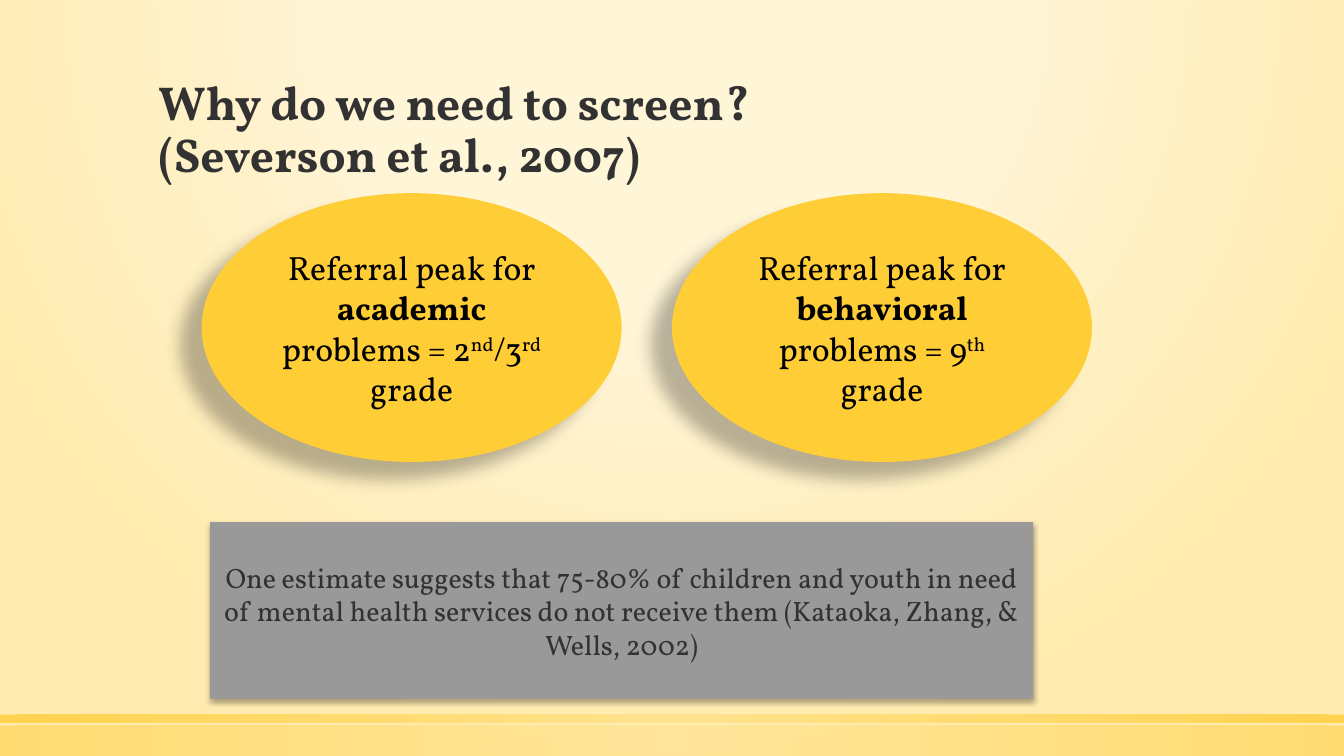
"""Build the slide on why schools need to screen students."""
from lxml.etree import SubElement
from pptx import Presentation
from pptx.dml.color import RGBColor
from pptx.enum.shapes import MSO_SHAPE as Preset
from pptx.enum.text import MSO_ANCHOR as Anchor, MSO_AUTO_SIZE as AutoSize, PP_ALIGN as Align
from pptx.oxml import parse_xml
from pptx.oxml.ns import nsdecls, qn
from pptx.util import Pt

FONT = "Vollkorn"
BLACK = RGBColor(0x00, 0x00, 0x00)
CHARCOAL = RGBColor(0x32, 0x32, 0x32)
GRAY = RGBColor(0x99, 0x99, 0x99)
GOLD = RGBColor(0xFF, 0xCD, 0x36)
LIGHT_GOLD = RGBColor(0xFF, 0xE1, 0x86)
CREAM = RGBColor(0xFF, 0xF5, 0xD7)
SAND = RGBColor(0xFF, 0xEB, 0xAF)

TITLE = "Why do we need to screen?\v(Severson et al., 2007)"
REFERRAL_PEAKS = [
    [("Referral peak for ", ""), ("academic", "bold"), (" problems = 2", ""),
     ("nd", "super"), ("/3", ""), ("rd", "super"), (" grade", "")],
    [("Referral peak for ", ""), ("behavioral", "bold"), (" problems = 9", ""),
     ("th", "super"), (" grade", "")],
]
ESTIMATE = [("One estimate suggests that 75-80% of children and youth in need of mental "
             "health services do not receive them (Kataoka, Zhang, & Wells, 2002)", "")]

SLIDE_W, SLIDE_H = 960, 540
BACKDROP = [(0, CREAM, 59), (40, CREAM, 66), (100, SAND, 100)]
FOOTER_BANDS = [(518.4, 21.6, 50), (510.5, 5.8, 80)]
PEAK_LEFT, PEAK_TOP, PEAK_W, PEAK_H, PEAK_STEP = 144, 138, 300, 192, 336
PEAK_SHADOW = (28, 11.8, 19.7, 141)
ESTIMATE_BOX = (150, 373, 588, 126)
ESTIMATE_SHADOW = (32, 3.5, 2.2, 90)


def shade_radially(owner, stops, focus):
    """Give a slide background or shape a circular gradient."""
    stop_xml = "".join(
        f'<a:gs pos="{position * 1000}"><a:srgbClr val="{color}">'
        f'<a:alpha val="{opacity * 1000}"/></a:srgbClr></a:gs>'
        for position, color, opacity in stops)
    left, top, right, bottom = (edge * 1000 for edge in focus)
    gradient = parse_xml(
        f'<a:gradFill {nsdecls("a")} rotWithShape="1"><a:gsLst>{stop_xml}</a:gsLst>'
        f'<a:path path="circle"><a:fillToRect l="{left}" t="{top}" r="{right}" b="{bottom}"/>'
        '</a:path></a:gradFill>')
    plain = owner.element.find(".//" + qn("a:gradFill"))
    plain.getparent().replace(plain, gradient)


def add_plain_shape(slide, preset, box):
    """Add a shape without outline or shadow."""
    shape = slide.shapes.add_shape(preset, *map(Pt, box))
    shape.shadow.inherit = False
    shape.line.fill.background()
    return shape


def cast_shadow(shape, opacity, blur, distance, angle):
    """Add a soft black outer shadow."""
    effects = shape.element.spPr.find(qn("a:effectLst"))
    shadow = SubElement(effects, qn("a:outerShdw"), blurRad=str(int(Pt(blur))),
                        dist=str(int(Pt(distance))), dir=str(angle * 60000),
                        algn="ctr", rotWithShape="0")
    color = SubElement(shadow, qn("a:srgbClr"), val=str(BLACK))
    SubElement(color, qn("a:alpha"), val=str(opacity * 1000))


def style(font, size, color, bold=False):
    """Set the typeface, size, colour and weight."""
    font.name, font.size, font.bold = FONT, Pt(size), bold
    font.color.rgb = color


def add_message(slide, preset, box, fill, shadow, pieces, size, color):
    """Add a filled shape with centred text."""
    message = add_plain_shape(slide, preset, box)
    message.fill.solid()
    message.fill.fore_color.rgb = fill
    cast_shadow(message, *shadow)
    frame = message.text_frame
    frame.word_wrap = True
    frame.vertical_anchor = Anchor.MIDDLE
    paragraph = frame.paragraphs[0]
    paragraph.alignment = Align.CENTER
    for words, emphasis in pieces:
        run = paragraph.add_run()
        run.text = words
        style(run.font, size, color, emphasis == "bold")
        if emphasis == "super":
            run.font._element.set("baseline", "30000")


def add_title(slide):
    """Place and format the title."""
    title = slide.shapes.title
    title.left, title.top, title.width, title.height = map(Pt, (106, 37, 749, 97))
    frame = title.text_frame
    frame.text = TITLE
    frame.word_wrap = True
    frame.auto_size = AutoSize.NONE
    frame.vertical_anchor = Anchor.BOTTOM
    heading = frame.paragraphs[0]
    heading.alignment = Align.LEFT
    heading.line_spacing = 0.9
    for run in heading.runs:
        style(run.font, 34, CHARCOAL, True)


def main():
    """Assemble and save the slide."""
    deck = Presentation()
    deck.slide_width, deck.slide_height = Pt(SLIDE_W), Pt(SLIDE_H)
    slide = deck.slides.add_slide(deck.slide_layouts[5])
    slide.background.fill.gradient()
    shade_radially(slide, BACKDROP, (50, -80, 50, 180))
    for top, height, opacity in FOOTER_BANDS:
        band = add_plain_shape(slide, Preset.RECTANGLE, (0, top, SLIDE_W, height))
        band.fill.gradient()
        shade_radially(band, [(0, LIGHT_GOLD, opacity), (100, GOLD, opacity)], (50, 50, 50, 50))
    add_title(slide)
    for index, pieces in enumerate(REFERRAL_PEAKS):
        box = (PEAK_LEFT + index * PEAK_STEP, PEAK_TOP, PEAK_W, PEAK_H)
        add_message(slide, Preset.OVAL, box, GOLD, PEAK_SHADOW, pieces, 24, BLACK)
    add_message(slide, Preset.RECTANGLE, ESTIMATE_BOX, GRAY, ESTIMATE_SHADOW,
                ESTIMATE, 20, CHARCOAL)
    deck.save("out.pptx")


if __name__ == "__main__":
    main()
